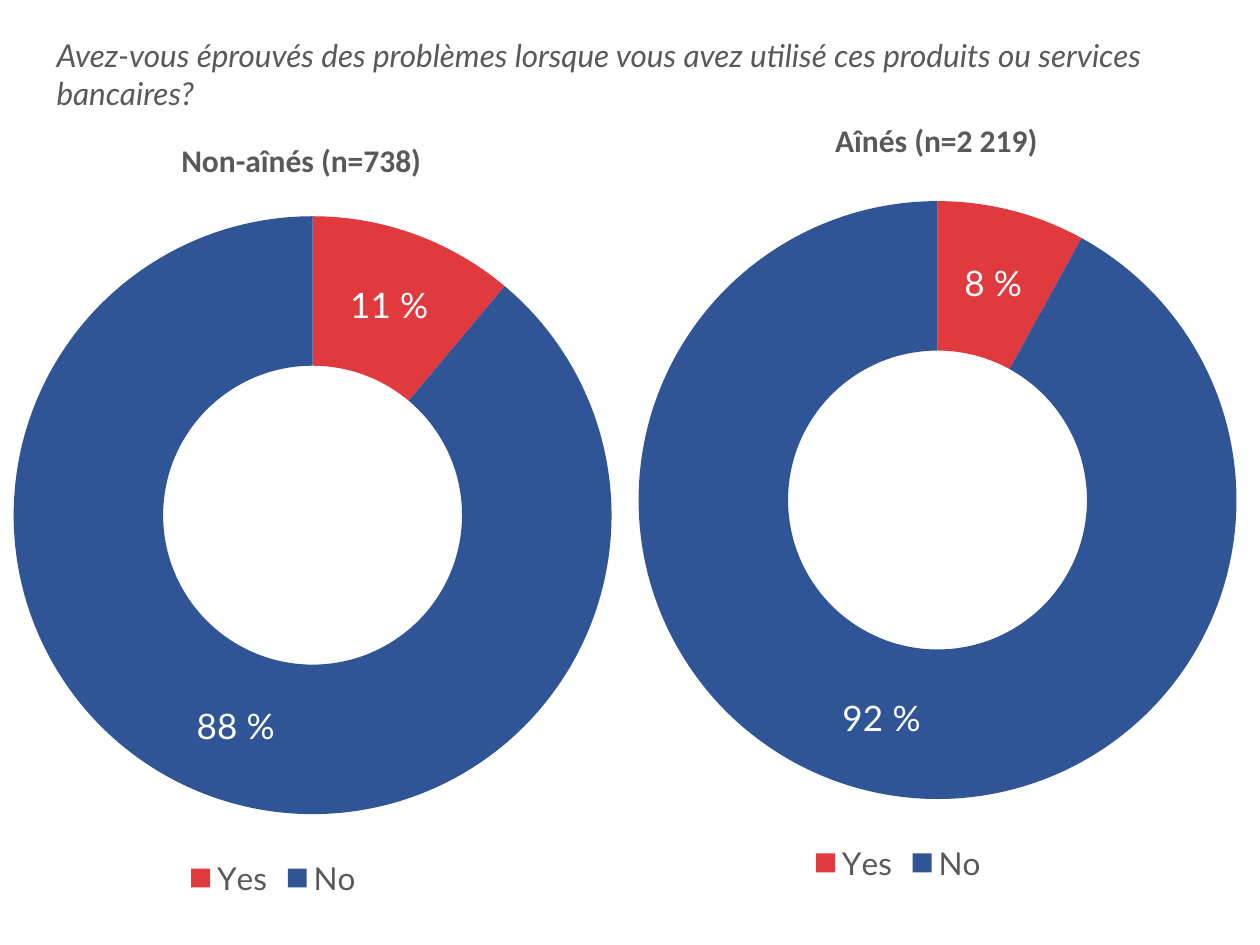
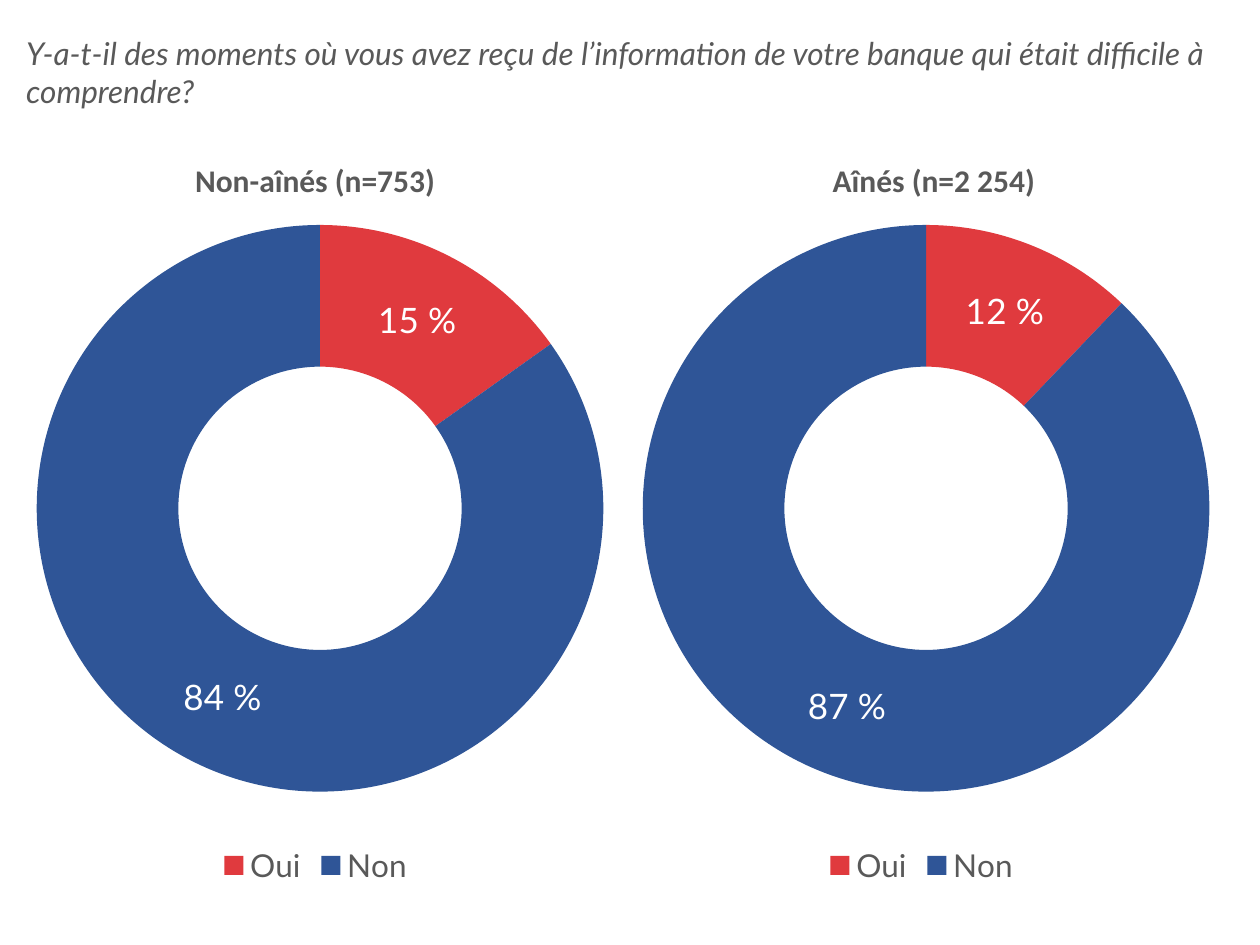
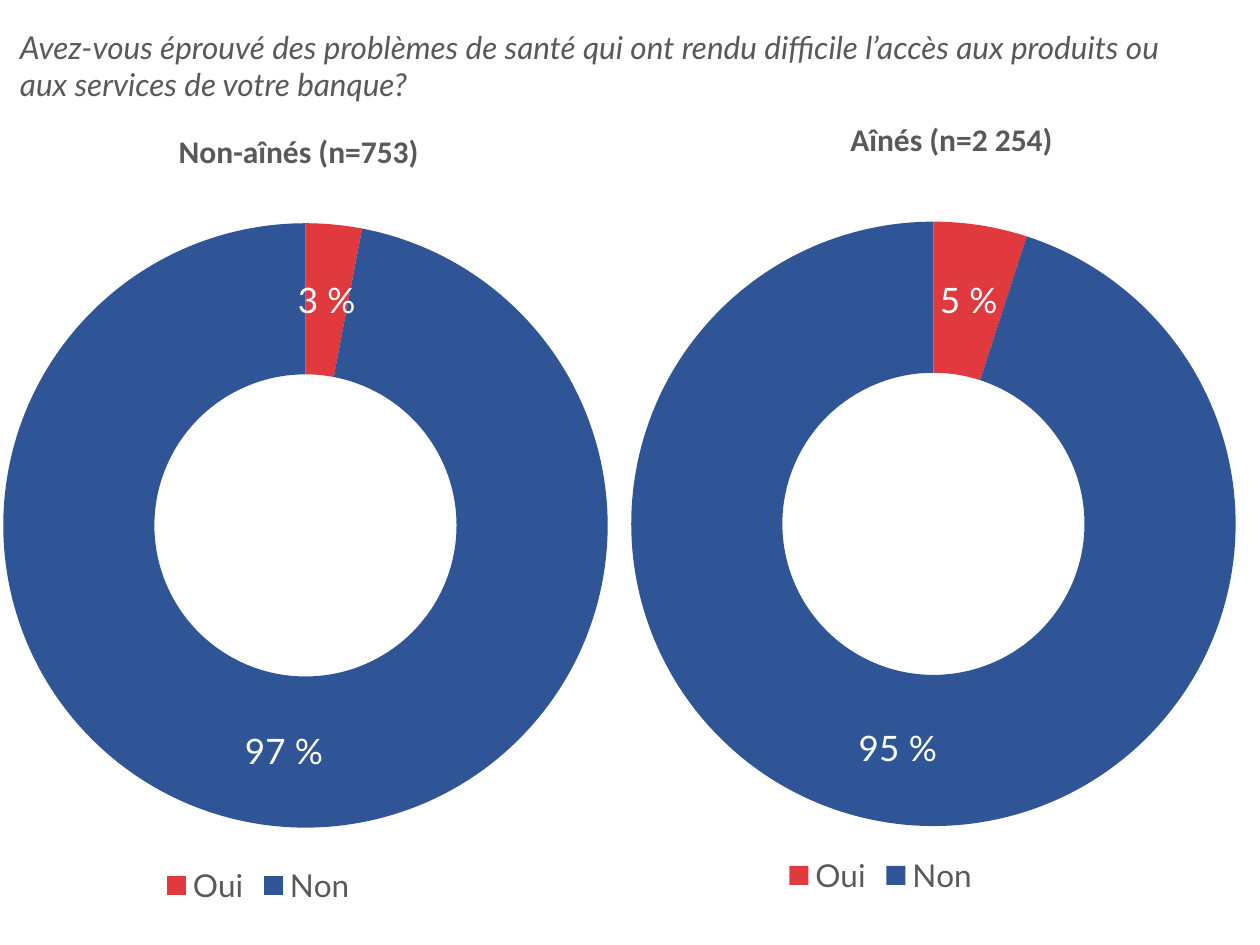
import pptx
import pptx.chart.data
import pptx.dml.color
import pptx.enum.chart
import pptx.enum.text
import pptx.oxml
import pptx.oxml.ns
import pptx.util

Inches = pptx.util.Inches

COLORS = {"yes": "E03A3E", "no": "2F5597", "text": "595959", "label": "FFFFFF"}
BODY_FONT = "Lato"
HEADING_FONT = "Calibri"
NAMESPACES = pptx.oxml.ns.nsdecls("c", "a")

SLIDES = [
    {
        "question": "Avez-vous éprouvés des problèmes lorsque vous avez utilisé ces produits ou services bancaires?",
        "question_box": (0.35, 0.24, 9.31, 0.71),
        "answers": ("Yes", "No"),
        "hole": 50,
        "panels": [
            {"box": (4.08, 0.95, 6.1, 6.1), "plot": (0.162, 0.106, 0.778, 0.778), "values": (0.08, 0.92),
             "heading": "Aînés (n=2 219)", "heading_box": (2.45, -0.04, 1.82, 0.4)},
            {"box": (-0.88, 1.07, 6.1, 6.1), "plot": (0.162, 0.106, 0.778, 0.778), "values": (0.11, 0.88),
             "heading": "Non-aînés (n=738)", "heading_box": (2.22, 0, 2.12, 0.4)},
        ],
    },
    {
        "question": "Y-a-t-il des moments où vous avez reçu de l’information de votre banque qui était difficile à comprendre?",
        "question_box": (0.11, 0.22, 9.78, 1.01),
        "answers": ("Oui", "Non"),
        "hole": 59,
        "panels": [
            {"box": (4.63, 1.16, 5.37, 5.91), "plot": (0.087, 0.106, 0.839, 0.761), "values": (0.12, 0.87),
             "heading": "Aînés (n=2 254)", "heading_box": (1.88, 0.07, 1.82, 0.4)},
            {"box": (-0.18, 1.16, 5.37, 5.91), "plot": (0.087, 0.106, 0.839, 0.761), "values": (0.15, 0.84),
             "heading": "Non-aînés (n=753)", "heading_box": (1.63, 0.07, 2.12, 0.4)},
        ],
    },
    {
        "question": "Avez-vous éprouvé des problèmes de santé qui ont rendu difficile l’accès aux produits ou aux services de votre banque?",
        "question_box": (0.06, 0.17, 9.31, 0.71),
        "answers": ("Oui", "Non"),
        "hole": 50,
        "panels": [
            {"box": (3.35, 1.02, 7.28, 6.13), "plot": (0.228, 0.12, 0.659, 0.784), "values": (0.05, 0.95),
             "heading": "Aînés (n=2 254)", "heading_box": (3.3, -0.12, 1.82, 0.4)},
            {"box": (-1.59, 1.1, 7.28, 6.13), "plot": (0.222, 0.109, 0.659, 0.784), "values": (0.03, 0.97),
             "heading": "Non-aînés (n=753)", "heading_box": (2.91, -0.1, 2.12, 0.4)},
        ],
    },
]


def rgb(name):
    return pptx.dml.color.RGBColor.from_string(COLORS[name])


def format_font(font, size, color, name=BODY_FONT, bold=False, italic=False):
    font.size = pptx.util.Pt(size)
    font.color.rgb = rgb(color)
    font.name = name
    font.bold = bold
    font.italic = italic


def add_text(page, box, text, wrap=True, **font_format):
    frame = page.shapes.add_textbox(*map(Inches, box)).text_frame
    frame.word_wrap = wrap
    frame.auto_size = pptx.enum.text.MSO_AUTO_SIZE.SHAPE_TO_FIT_TEXT
    span = frame.paragraphs[0].add_run()
    span.text = text
    format_font(span.font, 18, "text", **font_format)


def clear_background(chart):
    properties = pptx.oxml.parse_xml(
        f"<c:spPr {NAMESPACES}><a:noFill/><a:ln><a:noFill/></a:ln></c:spPr>"
    )
    chart.element.xpath("c:chart")[0].addnext(properties)


def place_plot(chart, plot):
    area = chart.element.xpath("c:chart/c:plotArea")[0]
    for layout in area.xpath("c:layout"):
        area.remove(layout)
    modes = '<c:xMode val="edge"/><c:yMode val="edge"/>'
    sizes = "".join(f'<c:{key} val="{value}"/>' for key, value in zip("xywh", plot))
    area.insert(0, pptx.oxml.parse_xml(
        f"<c:layout {NAMESPACES}><c:manualLayout>"
        f'<c:layoutTarget val="inner"/>{modes}{sizes}</c:manualLayout></c:layout>'
    ))


def add_doughnut(page, box, answers, values, hole, plot):
    data = pptx.chart.data.CategoryChartData(number_format="0%")
    data.categories = answers
    data.add_series("Series 1", values)
    chart = page.shapes.add_chart(
        pptx.enum.chart.XL_CHART_TYPE.DOUGHNUT, *map(Inches, box), data
    ).chart
    clear_background(chart)
    place_plot(chart, plot)
    chart.element.xpath(".//c:holeSize")[0].set("val", str(hole))
    chart.has_title = False
    format_font(chart.font, 24, "label", bold=True)

    chart.has_legend = True
    chart.legend.position = pptx.enum.chart.XL_LEGEND_POSITION.BOTTOM
    chart.legend.include_in_layout = False
    format_font(chart.legend.font, 18, "text")

    chart.plots[0].vary_by_categories = True
    series = chart.plots[0].series[0]
    for index, color in enumerate(("yes", "no")):
        slice_format = series.points[index].format
        slice_format.fill.solid()
        slice_format.fill.fore_color.rgb = rgb(color)
        slice_format.line.fill.background()
    labels = series.data_labels
    labels.show_value = True
    labels.show_percentage = False
    labels.number_format = "0\\ %"
    labels.number_format_is_linked = False
    format_font(labels.font, 20, "label")


def add_panel(page, answers, hole, box, plot, values, heading, heading_box):
    add_doughnut(page, box, answers, values, hole, plot)
    left, top, width, height = heading_box
    add_text(page, (box[0] + left, box[1] + top, width, height), heading,
             wrap=False, name=HEADING_FONT, bold=True)


def add_survey_slide(deck, content):
    page = deck.slides.add_slide(deck.slide_layouts[6])
    add_text(page, content["question_box"], content["question"], italic=True)
    for panel in content["panels"]:
        add_panel(page, content["answers"], content["hole"], **panel)


def main():
    deck = pptx.Presentation()
    deck.slide_width = Inches(10)
    deck.slide_height = Inches(7.5)
    for content in SLIDES:
        add_survey_slide(deck, content)
    deck.save("out.pptx")


if __name__ == "__main__":
    main()
